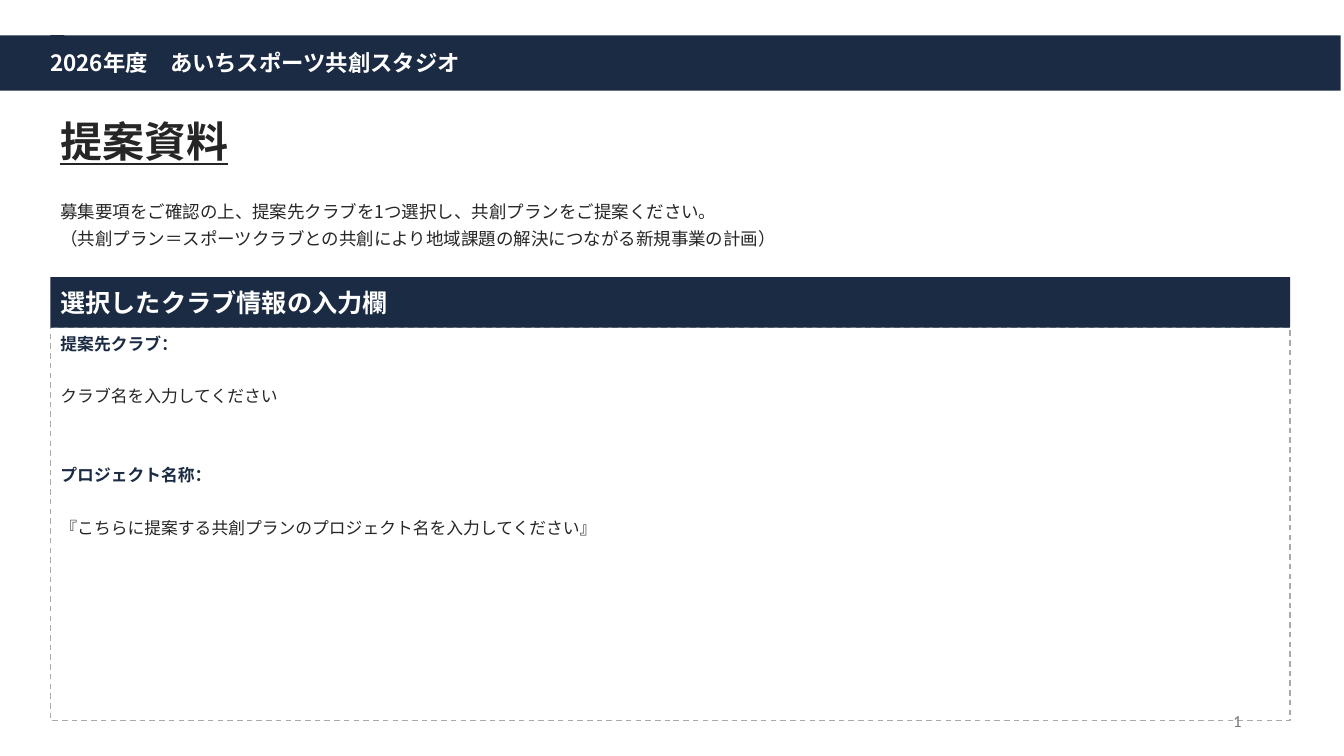
from dataclasses import dataclass

from lxml.etree import SubElement
from pptx import Presentation
from pptx.dml.color import RGBColor
from pptx.enum.dml import MSO_LINE
from pptx.enum.shapes import MSO_SHAPE
from pptx.enum.text import MSO_ANCHOR, MSO_AUTO_SIZE, PP_ALIGN
from pptx.oxml.ns import qn
from pptx.util import Pt


@dataclass(frozen=True)
class Theme:
    """Colours, fonts and type sizes of the slide."""
    navy: str = "1B2B44"
    ink: str = "262626"
    white: str = "FFFFFF"
    rule: str = "AAAAAA"
    grey: str = "797979"
    font: str = "Noto Sans CJK JP"
    digit: str = "Calibri"
    title: float = 30
    head: float = 18
    event: float = 16
    lead: float = 12.5
    body: float = 12


THEME = Theme()
LEFT, WIDE = 36, 885.6
PITCH = 18.75


def place(shape, left, top, width, height):
    """Move and size a shape, in points."""
    shape.left, shape.top = Pt(left), Pt(top)
    shape.width, shape.height = Pt(width), Pt(height)


def setup(shape, anchor=MSO_ANCHOR.MIDDLE, side=7.2, edge=3.6):
    """Set the wrapping, anchor and insets of a text frame."""
    frame = shape.text_frame
    frame.word_wrap = True
    frame.auto_size = MSO_AUTO_SIZE.NONE
    frame.vertical_anchor = anchor
    frame.margin_left = frame.margin_right = Pt(side)
    frame.margin_top = frame.margin_bottom = Pt(edge)


def write(shape, text, size, color, bold=False, under=False, font=THEME.font,
          align=PP_ALIGN.LEFT, pitch=None, before=0):
    """Write one formatted paragraph, after any text already present."""
    frame = shape.text_frame
    para = frame.add_paragraph() if frame.text else frame.paragraphs[0]
    para.alignment = align
    para.space_before = Pt(before)
    if pitch:
        para.line_spacing = Pt(pitch)
    run = para.add_run()
    run.text = text
    run.font.size, run.font.name = Pt(size), font
    run.font.bold, run.font.underline = bold, under
    run.font.color.rgb = RGBColor.from_string(color)
    SubElement(run.font._element, qn("a:ea"), typeface=font)
    return para


def add_bar(slide, left, top, width, height):
    """Add a plain navy bar."""
    bar = slide.shapes.add_shape(
        MSO_SHAPE.RECTANGLE, Pt(left), Pt(top), Pt(width), Pt(height))
    bar.shadow.inherit = False
    bar.fill.solid()
    bar.fill.fore_color.rgb = RGBColor.from_string(THEME.navy)
    bar.line.fill.background()
    setup(bar)
    return bar


def add_label(slide, left, top, width, height, **inset):
    """Add an empty text box ready for writing."""
    label = slide.shapes.add_textbox(Pt(left), Pt(top), Pt(width), Pt(height))
    setup(label, **inset)
    return label


def fill_form(form):
    """Frame the body placeholder and write its entry fields."""
    place(form, LEFT, 234, WIDE, 280.8)
    setup(form, MSO_ANCHOR.TOP, edge=0)
    form.line.color.rgb = RGBColor.from_string(THEME.rule)
    form.line.width = Pt(1)
    form.line.dash_style = MSO_LINE.DASH
    fields = [
        ("提案先クラブ：", "クラブ名を入力してください"),
        ("プロジェクト名称：",
         "『こちらに提案する共創プランのプロジェクト名を入力してください』"),
    ]
    for index, (name, hint) in enumerate(fields):
        rows = [(name, THEME.navy, True, index * 2 * PITCH),
                (hint, THEME.ink, False, PITCH)]
        for text, color, bold, before in rows:
            para = write(form, text, THEME.body, color, bold=bold,
                         pitch=PITCH, before=before)
            props = para._p.get_or_add_pPr()
            props.set("marL", "0")
            props.set("indent", "0")
            SubElement(props, qn("a:buNone"))


def main():
    """Build and save the proposal slide."""
    deck = Presentation()
    deck.slide_width, deck.slide_height = Pt(960), Pt(540)
    slide = deck.slides.add_slide(deck.slide_layouts[1])
    title, form = slide.placeholders

    add_bar(slide, LEFT, 25.2, 10, 31)
    add_bar(slide, 0, 25.2, 957.6, 39.6)
    event = add_label(slide, LEFT, 25.2, WIDE, 39.6, side=0, edge=0)
    write(event, "2026年度　あいちスポーツ共創スタジオ", THEME.event,
          THEME.white, bold=True)

    place(title, LEFT, 79.2, 576, 43.2)
    setup(title)
    write(title, "提案資料", THEME.title, THEME.ink, bold=True, under=True)

    lead = add_label(slide, LEFT, 133.2, WIDE, 50.4)
    for text in (
        "募集要項をご確認の上、提案先クラブを1つ選択し、共創プランをご提案ください。",
        "（共創プラン＝スポーツクラブとの共創により地域課題の解決につながる新規事業の計画）",
    ):
        write(lead, text, THEME.lead, THEME.ink, pitch=19.6)

    head = add_bar(slide, LEFT, 198, WIDE, 36)
    write(head, "選択したクラブ情報の入力欄", THEME.head, THEME.white, bold=True)
    fill_form(form)

    number = add_label(slide, 678, 500.4, 216, 28.8)
    write(number, "1", THEME.body, THEME.grey, font=THEME.digit,
          align=PP_ALIGN.RIGHT)
    deck.save("out.pptx")


if __name__ == "__main__":
    main()
